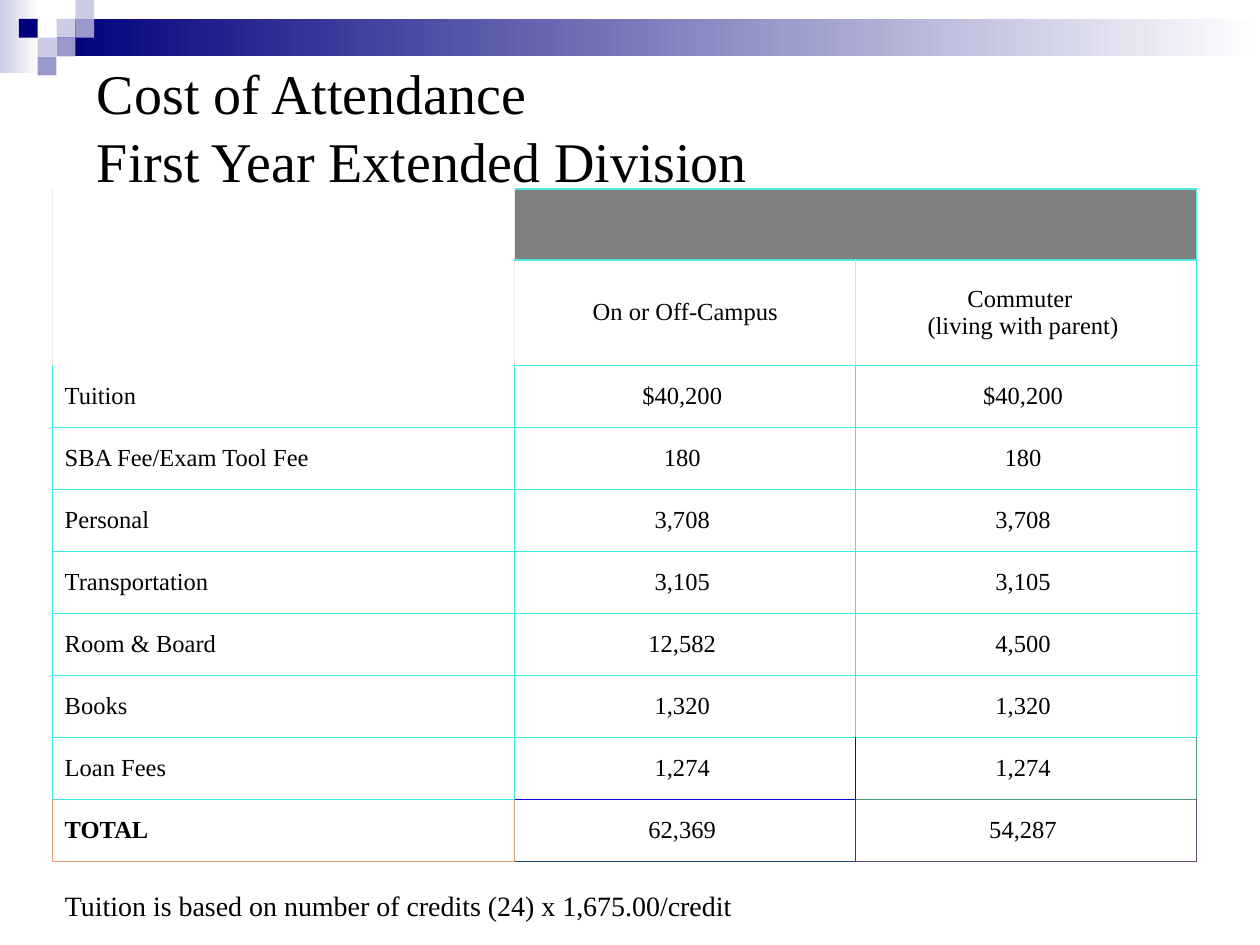
from dataclasses import dataclass

import pptx
import pptx.dml.color
import pptx.enum.shapes
import pptx.enum.text
import pptx.oxml.ns
import pptx.util
from lxml import etree

Cm = pptx.util.Cm
Pt = pptx.util.Pt
qn = pptx.oxml.ns.qn


@dataclass(frozen=True)
class Theme:
    font: str = "Times New Roman"
    title_size: int = 32
    break_size: int = 40
    cell_size: int = 14
    note_size: int = 16
    text: str = "000000"
    white: str = "FFFFFF"
    navy: str = "00007D"
    lavender: str = "CCCCE6"
    violet: str = "9999CC"
    band: str = "808080"
    grid: str = "40EAE4"
    border_width: float = 0.75


THEME = Theme()
SQUARE = 0.38
SQUARES = [
    (3, 1, THEME.lavender),
    (4, 0, THEME.lavender),
    (4, 1, THEME.violet),
    (2, 2, THEME.lavender),
    (1, 1, THEME.navy),
    (3, 2, THEME.violet),
    (2, 3, THEME.violet),
]

COLUMN_WIDTHS = [9.33, 6.87, 6.87]
HEADER_HEIGHTS = [1.43, 2.12]
ROW_HEIGHT = 1.25
HEADINGS = [["On or Off-Campus"], ["Commuter  ", "(living with parent) "]]
COSTS = [
    ("Tuition", "$40,200", "$40,200"),
    ("SBA Fee/Exam Tool Fee", "180", "180"),
    ("Personal", "3,708", "3,708"),
    ("Transportation", "3,105", "3,105"),
    ("Room & Board", "12,582", "4,500"),
    ("Books", "1,320", "1,320"),
    ("Loan Fees", "1,274", "1,274"),
    ("TOTAL", "62,369", "54,287"),
]

SIDES = ["L", "R", "T", "B"]
CORNER = ("F8E6E4", "F8E6E4", None, "FFFFFF")
BAND = ("F8E6E4", "50E9E4", "50E9E4", "50E9E4")
PLAIN = (THEME.grid,) * 4
BORDERS = {
    (0, 0): CORNER,
    (1, 0): CORNER,
    (0, 1): BAND,
    (0, 2): BAND,
    (1, 1): ("F8E6E4", "B8EAE4", "50E9E4", THEME.grid),
    (1, 2): ("B8EAE4", THEME.grid, "50E9E4", THEME.grid),
    (2, 0): (THEME.grid, THEME.grid, "FFFFFF", THEME.grid),
    (8, 1): (THEME.grid, "0807E5", THEME.grid, "0807E5"),
    (8, 2): ("0807E5", "509E78", THEME.grid, "509E78"),
    (9, 0): ("D8A078", "D8A078", THEME.grid, "D8A078"),
    (9, 1): ("D8A078", "204A76", "0807E5", "204A76"),
    (9, 2): ("204A76", "604976", "509E78", "604976"),
}


def rgb(value):
    return pptx.dml.color.RGBColor.from_string(value)


def add_run(p, text, size, bold=False):
    r = p.add_run()
    r.text = text
    r.font.name = THEME.font
    r.font.size = Pt(size)
    r.font.bold = bold
    r.font.color.rgb = rgb(THEME.text)


def add_block(s, left, top, width, height, *colors):
    kind = pptx.enum.shapes.MSO_SHAPE.RECTANGLE
    sp = s.shapes.add_shape(kind, Cm(left), Cm(top), Cm(width), Cm(height))
    sp.shadow.inherit = False
    sp.line.fill.background()
    if len(colors) == 1:
        sp.fill.solid()
        sp.fill.fore_color.rgb = rgb(colors[0])
    else:
        sp.fill.gradient()
        sp.fill.gradient_angle = 0
        for stop, color in zip(sp.fill.gradient_stops, colors):
            stop.color.rgb = rgb(color)


def add_banner(s):
    add_block(s, 0, 0, 0.79, 1.47, THEME.lavender, THEME.white)
    add_block(s, 1.14, SQUARE, 24.26, 0.76, THEME.navy, THEME.white)
    for column, row, color in SQUARES:
        add_block(s, column * SQUARE, row * SQUARE, SQUARE, SQUARE, color)


def set_title(s, first, second):
    sp = s.shapes.title
    sp.left, sp.top, sp.width, sp.height = Cm(1.7), Cm(1.27), Cm(22.43), Cm(2.54)
    tf = sp.text_frame
    tf.word_wrap = True
    tf.auto_size = pptx.enum.text.MSO_AUTO_SIZE.NONE
    tf.vertical_anchor = pptx.enum.text.MSO_ANCHOR.MIDDLE
    p = tf.paragraphs[0]
    p.alignment = pptx.enum.text.PP_ALIGN.LEFT
    add_run(p, first, THEME.title_size)
    p.add_line_break()
    etree.SubElement(p._p[-1], qn("a:rPr"), sz=str(THEME.break_size * 100))
    add_run(p, second, THEME.title_size)


def set_borders(cell, colors):
    tc_pr = cell._tc.get_or_add_tcPr()
    for side, color in zip(SIDES, colors):
        ln = etree.SubElement(tc_pr, qn(f"a:ln{side}"), w=str(Pt(THEME.border_width)))
        if color is None:
            etree.SubElement(ln, qn("a:noFill"))
        else:
            fill = etree.SubElement(ln, qn("a:solidFill"))
            etree.SubElement(fill, qn("a:srgbClr"), val=color)


def fill_cell(cell, lines, centered, bold=False):
    align = pptx.enum.text.PP_ALIGN
    cell.vertical_anchor = pptx.enum.text.MSO_ANCHOR.MIDDLE
    tf = cell.text_frame
    for i, line in enumerate(lines):
        p = tf.add_paragraph() if i else tf.paragraphs[0]
        p.alignment = align.CENTER if centered else align.LEFT
        add_run(p, line, THEME.cell_size, bold)


def add_cost_table(s):
    heights = HEADER_HEIGHTS + [ROW_HEIGHT] * len(COSTS)
    frame = s.shapes.add_table(
        len(heights), len(COLUMN_WIDTHS),
        Cm(1.05), Cm(3.81), Cm(sum(COLUMN_WIDTHS)), Cm(sum(heights)),
    )
    table = frame.table
    table.first_row = False
    table.horz_banding = False
    for column, width in zip(table.columns, COLUMN_WIDTHS):
        column.width = Cm(width)
    for i, height in enumerate(heights):
        table.rows[i].height = Cm(height)
        for j in range(len(COLUMN_WIDTHS)):
            cell = table.cell(i, j)
            set_borders(cell, BORDERS.get((i, j), PLAIN))
            if i == 0 and j > 0:
                cell.fill.solid()
                cell.fill.fore_color.rgb = rgb(THEME.band)
            else:
                cell.fill.background()
    table.cell(0, 0).merge(table.cell(1, 0))
    table.cell(0, 1).merge(table.cell(0, 2))
    for j, lines in enumerate(HEADINGS, 1):
        fill_cell(table.cell(1, j), lines, True)
    for i, row in enumerate(COSTS, len(HEADER_HEIGHTS)):
        for j, text in enumerate(row):
            fill_cell(table.cell(i, j), [f"{text} "], j > 0, text == "TOTAL")


def add_note(s, text):
    sp = s.shapes.add_textbox(Cm(1.06), Cm(17.78), Cm(23.07), Cm(0.94))
    tf = sp.text_frame
    tf.word_wrap = True
    tf.auto_size = pptx.enum.text.MSO_AUTO_SIZE.SHAPE_TO_FIT_TEXT
    add_run(tf.paragraphs[0], text, THEME.note_size)


def main():
    prs = pptx.Presentation()
    prs.slide_width, prs.slide_height = Cm(25.4), Cm(19.05)
    s = prs.slides.add_slide(prs.slide_layouts[5])
    add_banner(s)
    set_title(s, "Cost of Attendance ", "First Year Extended Division")
    add_cost_table(s)
    add_note(s, "Tuition is based on number of credits (24) x 1,675.00/credit")
    prs.save("out.pptx")


if __name__ == "__main__":
    main()
